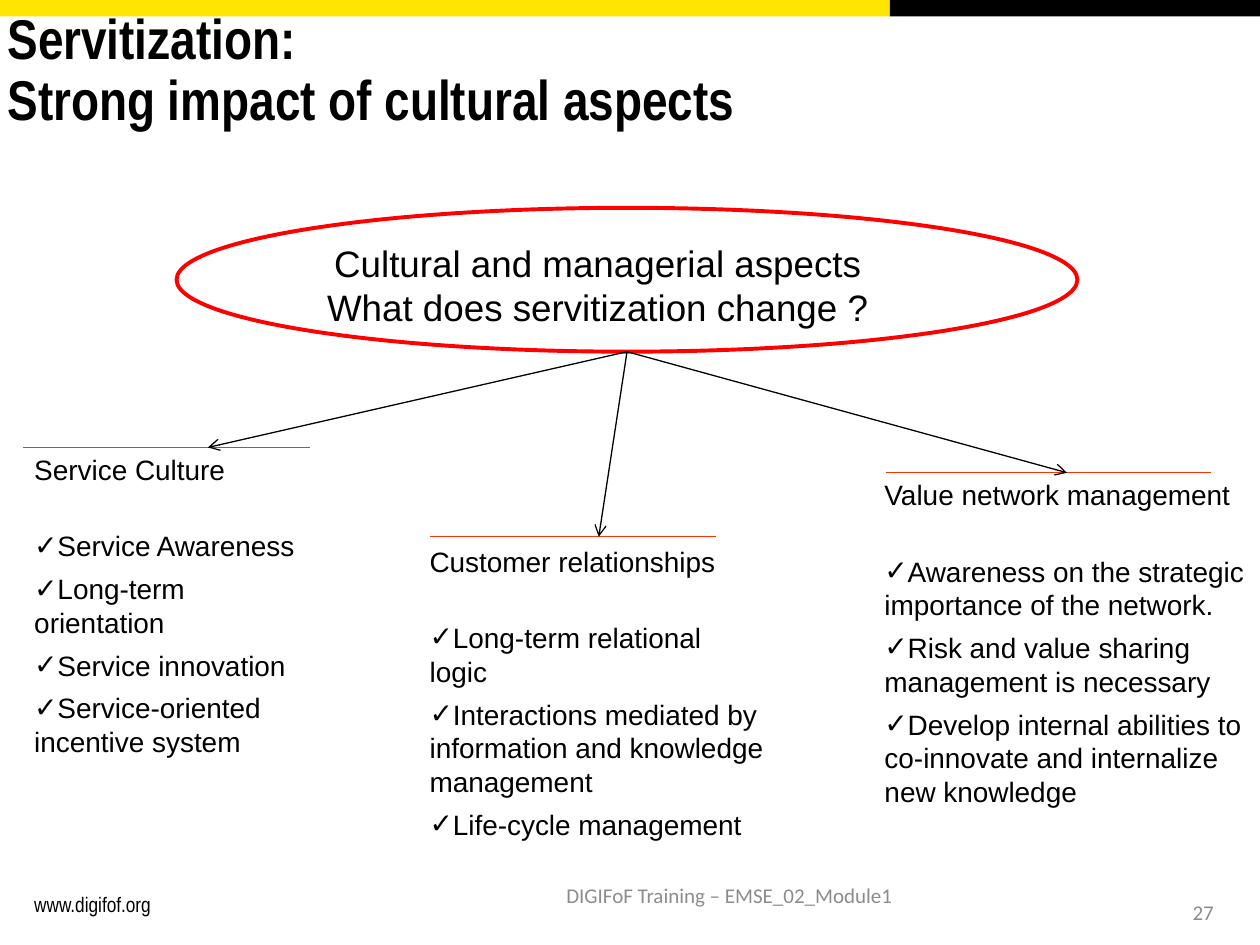
from lxml.etree import SubElement
from pptx import Presentation
from pptx.dml.color import RGBColor
from pptx.enum.shapes import MSO_CONNECTOR, MSO_SHAPE
from pptx.enum.text import MSO_ANCHOR, MSO_AUTO_SIZE, PP_ALIGN
from pptx.oxml.ns import qn
from pptx.util import Cm, Pt

COLORS = {"yellow": "FFE500", "black": "000000", "red": "FF0000",
          "orange": "FF3300", "gray": "8C8C8C"}

COLUMNS = [
    dict(box=(0.46, 9.02, 6.2, 7.26), rule=(0.46, 6.25, 9.02), tip=4.19,
         heading="Service Culture",
         points=["Service Awareness", "Long-term orientation", "Service innovation",
                 "Service-oriented incentive system"]),
    dict(box=(8.43, 10.87, 7.24, 6.22), rule=(8.66, 14.43, 10.82), tip=12.07,
         heading="Customer relationships",
         points=["Long-term relational logic",
                 "Interactions mediated by information and knowledge management",
                 "Life-cycle management"]),
    dict(box=(17.6, 9.53, 7.8, 8.66), rule=(17.86, 24.41, 9.53), tip=21.51,
         heading="Value network management",
         points=["Awareness on the strategic importance of the network.",
                 "Risk and value sharing management is necessary",
                 "Develop internal abilities to co-innovate and internalize new knowledge"]),
]


def rgb(name):
    return RGBColor.from_string(COLORS[name])


def write(p, text, size=16, font="Arial", color="black", bold=False,
          align=PP_ALIGN.LEFT, before=0, spacing=1.0, bullet=None):
    """Fill one paragraph; a vertical tab in the text is a line break."""
    p.text = text
    pPr = p._p.get_or_add_pPr()
    pPr.set("marL", "0")
    pPr.set("indent", "0")
    if bullet:
        SubElement(pPr, qn("a:buFont"), typeface="Arial")
        SubElement(pPr, qn("a:buChar"), char=bullet)
    else:
        SubElement(pPr, qn("a:buNone"))
    p.alignment = align
    p.space_before = Pt(before)
    p.line_spacing = spacing
    for r in p.runs:
        r.font.size = Pt(size)
        r.font.name = font
        r.font.bold = bold
        r.font.color.rgb = rgb(color)


class Deck:
    def __init__(self, prs, layout):
        self.s = prs.slides.add_slide(prs.slide_layouts[layout])
        self.inset = Cm(0.23), Cm(0.1)

    def frame(self, sp, anchor=MSO_ANCHOR.TOP, wrap=True):
        tf = sp.text_frame
        tf.auto_size = MSO_AUTO_SIZE.NONE
        tf.word_wrap = wrap
        tf.vertical_anchor = anchor
        tf.margin_left = tf.margin_right = self.inset[0]
        tf.margin_top = tf.margin_bottom = self.inset[1]
        return tf

    def placeholder(self, idx, box, anchor=MSO_ANCHOR.TOP):
        sp = self.s.placeholders[idx]
        sp.left, sp.top, sp.width, sp.height = map(Cm, box)
        return self.frame(sp, anchor)

    def title(self, text, box):
        tf = self.placeholder(0, box, MSO_ANCHOR.MIDDLE)
        write(tf.paragraphs[0], text, size=32, font="Arial Narrow", bold=True, spacing=0.9)

    def column(self, idx, box, heading, points):
        tf = self.placeholder(idx, box)
        write(tf.paragraphs[0], heading)
        for i, point in enumerate(points):
            write(tf.add_paragraph(), point, bullet="✓", before=5.3 if i else 24.5)

    def text(self, lines, box, wrap=True, **style):
        sp = self.s.shapes.add_textbox(*map(Cm, box))
        tf = self.frame(sp, MSO_ANCHOR.MIDDLE, wrap)
        for i, line in enumerate(lines):
            write(tf.add_paragraph() if i else tf.paragraphs[0], line, **style)

    def shape(self, kind, box, fill=None, line=None, width=2.25):
        sp = self.s.shapes.add_shape(kind, *map(Cm, box))
        sp.shadow.inherit = False
        if fill:
            sp.fill.solid()
            sp.fill.fore_color.rgb = rgb(fill)
        else:
            sp.fill.background()
        if line:
            sp.line.color.rgb = rgb(line)
            sp.line.width = Pt(width)
        else:
            sp.line.fill.background()

    def line(self, start, end, color, arrow=False):
        c = self.s.shapes.add_connector(MSO_CONNECTOR.STRAIGHT, *map(Cm, start + end))
        c.line.color.rgb = rgb(color)
        c.line.width = Pt(0.75)
        if arrow:
            SubElement(c.line._get_or_add_ln(), qn("a:tailEnd"), type="arrow")
        SubElement(c._element.spPr, qn("a:effectLst"))

    def drop_empty_placeholders(self):
        for sp in list(self.s.placeholders):
            if not sp.text_frame.text:
                sp._element.getparent().remove(sp._element)


def main():
    prs = Presentation()
    prs.slide_width, prs.slide_height = Cm(25.4), Cm(19.05)
    deck = Deck(prs, layout=4)

    deck.shape(MSO_SHAPE.RECTANGLE, (0, 0, 17.94, 0.33), fill="yellow")
    deck.shape(MSO_SHAPE.RECTANGLE, (17.94, 0, 7.46, 0.33), fill="black")
    deck.title("Servitization:\vStrong impact of cultural aspects", (-0.08, 0.2, 20.04, 2.5))

    deck.text(["Cultural and managerial aspects", "What does servitization change ?"],
              (6.32, 4.72, 11.46, 2.03), wrap=False, size=21, align=PP_ALIGN.CENTER)
    left, top, width, height = oval = (3.56, 4.19, 18.16, 2.9)
    deck.shape(MSO_SHAPE.OVAL, oval, line="red")

    hub = (left + width / 2, top + height)
    for idx, col in enumerate(COLUMNS, start=1):
        deck.column(idx, col["box"], col["heading"], col["points"])
        x1, x2, y = col["rule"]
        deck.line((x1, y), (x2, y), "orange")
        deck.line(hub, (col["tip"], y), "black", arrow=True)

    deck.text(["www.digifof.org"], (0.46, 17.85, 5.56, 0.75), size=12, font="Arial Narrow")
    footer = dict(size=12, font="Calibri", color="gray")
    deck.text(["DIGIFoF Training – EMSE_02_Module1"], (8.99, 17.53, 11.43, 1.02),
              align=PP_ALIGN.CENTER, **footer)
    deck.text(["27"], (19, 17.88, 5.7, 1.02), align=PP_ALIGN.RIGHT, **footer)

    deck.drop_empty_placeholders()
    prs.save("out.pptx")


if __name__ == "__main__":
    main()
